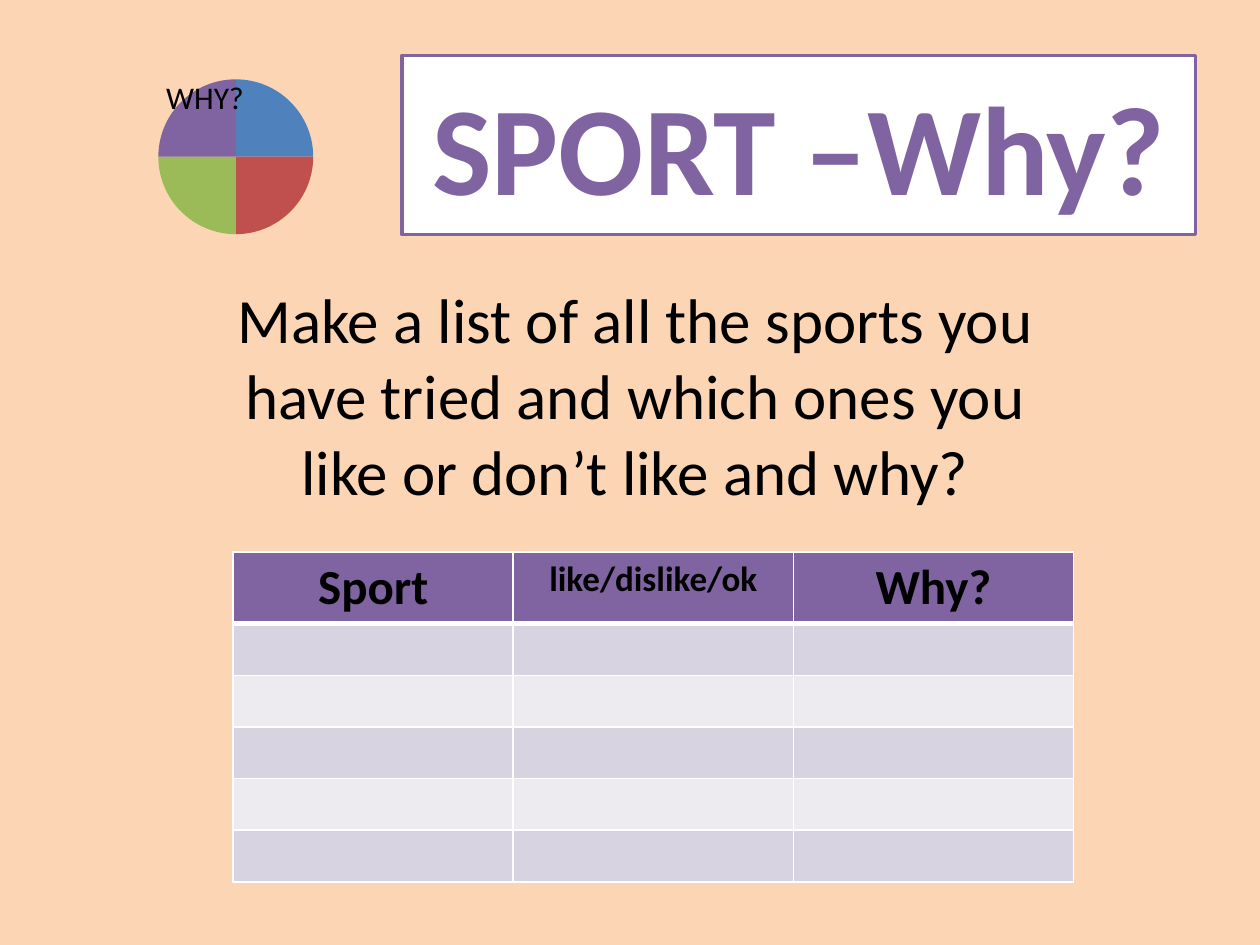
from dataclasses import dataclass

from lxml.etree import SubElement
from pptx import Presentation
from pptx.chart.data import CategoryChartData
from pptx.dml.color import RGBColor as Color
from pptx.enum.chart import XL_CHART_TYPE as ChartType, XL_LABEL_POSITION as LabelPosition
from pptx.enum.shapes import MSO_SHAPE as Shape
from pptx.enum.text import MSO_ANCHOR as Anchor, PP_ALIGN as Align
from pptx.oxml import parse_xml
from pptx.oxml.ns import nsdecls, qn
from pptx.util import Inches, Pt


@dataclass(frozen=True)
class Theme:
    """Colours, font and type sizes of the slide."""
    font: str = "Calibri"
    background: str = "FCD5B5"
    accent: str = "8064A2"
    white: str = "FFFFFF"
    ink: str = "000000"
    bands: tuple = ("D8D3E0", "EDEAF0")
    slices: tuple = ("4F81BD", "C0504D", "9BBB59", "8064A2")
    title: int = 72
    body: int = 36
    heading: int = 28
    small_heading: int = 20
    label: int = 18


THEME = Theme()


def paint(fill, colour):
    """Make a fill solid in the given colour."""
    fill.solid()
    fill.fore_color.rgb = Color.from_string(colour)


def style_font(font, size, colour=THEME.ink, bold=False):
    """Set the face, size, colour and weight of a font."""
    font.name, font.size, font.bold = THEME.font, Pt(size), bold
    font.color.rgb = Color.from_string(colour)


def write(frame, text, size, colour=THEME.ink, bold=False, wrap=True):
    """Fill a text frame with one centred paragraph."""
    frame.text = text
    frame.word_wrap = wrap
    para = frame.paragraphs[0]
    para.alignment = Align.CENTER
    for span in para.runs:
        style_font(span.font, size, colour, bold)


def add_title(page, text):
    """Add the framed title."""
    box = page.shapes.add_shape(
        Shape.RECTANGLE, Inches(3.19), Inches(0.44), Inches(6.3), Inches(1.42))
    box.shadow.inherit = False
    paint(box.fill, THEME.white)
    paint(box.line.fill, THEME.accent)
    box.line.width = Pt(2)
    box.text_frame.vertical_anchor = Anchor.MIDDLE
    write(box.text_frame, text, THEME.title, THEME.accent, True)


def add_task(page, text):
    """Add the instruction under the title."""
    box = page.shapes.add_textbox(
        Inches(1.54), Inches(2.18), Inches(7), Inches(1.92))
    write(box.text_frame, text, THEME.body)


def make_layout(**values):
    """Build a manual chart layout from its settings."""
    settings = "".join(f'<c:{name} val="{value}"/>' for name, value in values.items())
    return parse_xml(f'<c:layout {nsdecls("c")}><c:manualLayout>{settings}'
                     '</c:manualLayout></c:layout>')


def add_pie(page, label):
    """Add the pie of equal quarters with its last slice labelled."""
    data = CategoryChartData()
    data.categories = ["1", "2", "3", "4"]
    data.add_series("Series 1", [25] * 4)
    chart = page.shapes.add_chart(
        ChartType.PIE, Inches(0), Inches(0.36), Inches(3.86), Inches(1.5), data).chart
    chart.has_legend = chart.has_title = False
    style_font(chart.font, THEME.label)
    points = chart.plots[0].series[0].points
    for index, colour in enumerate(THEME.slices):
        paint(points[index].format.fill, colour)
    data_label = points[3].data_label
    write(data_label.text_frame, label, THEME.label, wrap=False)
    data_label.position = LabelPosition.OUTSIDE_END
    chart.element.xpath("//c:dLbl/c:idx")[0].addnext(make_layout(x=0.14, y=0.11))
    for leader in chart.element.xpath("//c:showLeaderLines"):
        leader.set("val", "0")
    area = chart.element.xpath("//c:plotArea")[0]
    for layout in area.findall(qn("c:layout")):
        area.remove(layout)
    area.insert(0, make_layout(layoutTarget="inner", xMode="edge", yMode="edge",
                               x=0.1, y=0.18, w=0.77, h=0.82))


def add_borders(cell, bottom):
    """Draw white borders round a cell, the bottom one in its own width."""
    properties = cell._tc.get_or_add_tcPr()
    widths = {"a:lnL": 1, "a:lnR": 1, "a:lnT": 1, "a:lnB": bottom}
    for position, (tag, width) in enumerate(widths.items()):
        line = SubElement(properties, qn(tag), w=str(Pt(width)))
        solid = SubElement(line, qn("a:solidFill"))
        SubElement(solid, qn("a:srgbClr"), val=THEME.white)
        properties.insert(position, line)


def add_sports_table(page, headings, blank_rows):
    """Add the table with a heading row and banded blank rows."""
    table = page.shapes.add_table(
        blank_rows + 1, len(headings), Inches(1.85), Inches(4.38),
        Inches(6.67), Inches(2.6)).table
    table.horz_banding = False
    for index, row in enumerate(table.rows):
        row.height = Inches(0.41 if index else 0.57)
        for cell in row.cells:
            paint(cell.fill, THEME.bands[(index - 1) % 2] if index else THEME.accent)
            add_borders(cell, 1 if index else 3)
    for column, (text, size) in enumerate(headings):
        write(table.cell(0, column).text_frame, text, size, bold=True)


def main():
    """Build and save the slide."""
    deck = Presentation()
    deck.slide_width, deck.slide_height = Inches(10), Inches(7.5)
    page = deck.slides.add_slide(deck.slide_layouts[6])
    paint(page.background.fill, THEME.background)
    add_title(page, "SPORT –Why?")
    add_task(page, "Make a list of all the sports you have tried and which ones "
                   "you like or don’t like and why?")
    add_pie(page, "WHY?")
    add_sports_table(page, [("Sport", THEME.heading),
                            ("like/dislike/ok", THEME.small_heading),
                            ("Why?", THEME.heading)], 5)
    deck.save("out.pptx")


if __name__ == "__main__":
    main()
